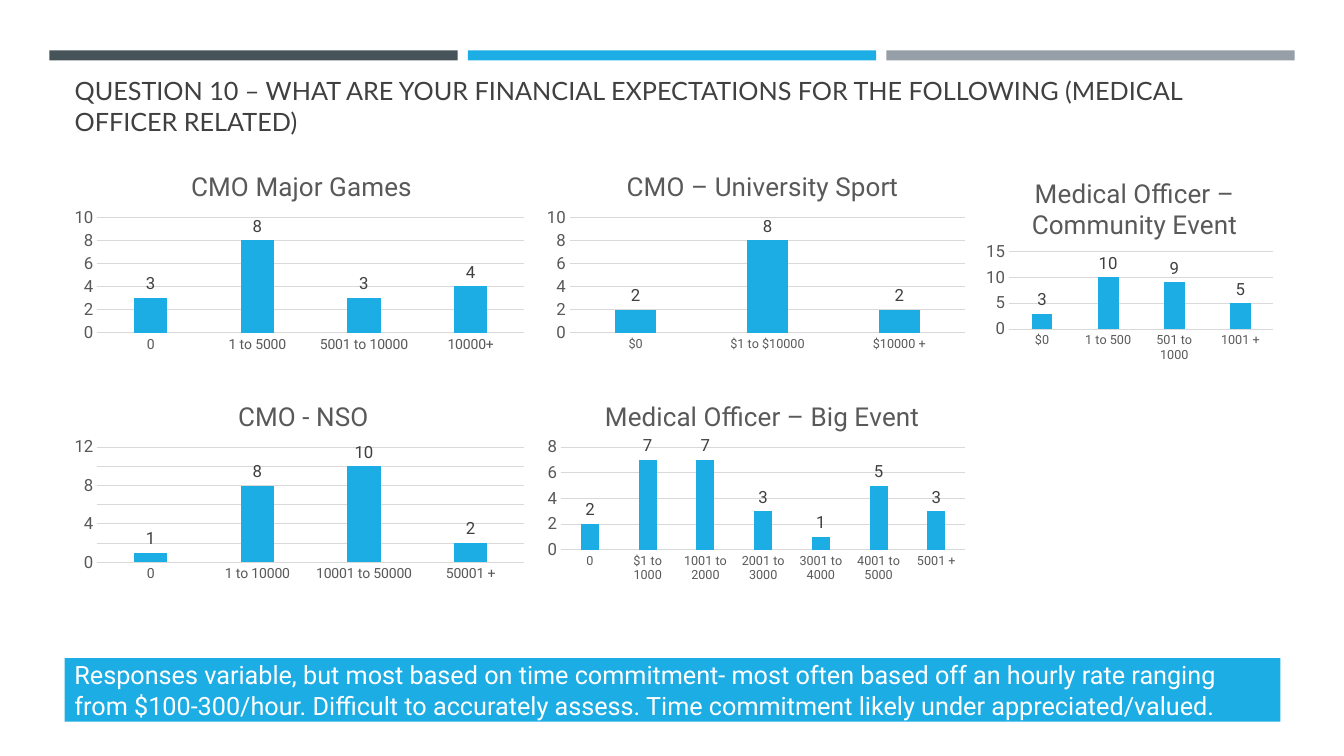
from dataclasses import dataclass

from lxml.etree import SubElement
from pptx import Presentation
from pptx.chart.data import CategoryChartData
from pptx.dml.color import RGBColor
from pptx.enum.chart import XL_CHART_TYPE, XL_LABEL_POSITION, XL_TICK_MARK
from pptx.enum.shapes import MSO_SHAPE
from pptx.enum.text import MSO_ANCHOR, MSO_AUTO_SIZE, PP_ALIGN
from pptx.oxml.ns import qn
from pptx.util import Inches, Pt

BLUE, DARK, GREY = "1CADE4", "465359", "969FA7"
TEXT, SOFT, GRID = "404040", "595959", "D9D9D9"
LEFT, WIDTH = 0.64, 12.06


@dataclass
class Panel:
    title: str
    box: tuple[float, float, float, float]
    votes: dict[str, int]
    top: int  # highest value on the axis
    step: int
    size: float  # category labels, in points
    head: tuple[float, float]  # title place, as shares of the chart
    plot: tuple[float, float, float, float]  # plot place, as shares


ROWS = (1.47, 3.75)
HIGH = 2.08
PANELS = [
    Panel("CMO Major Games", (LEFT, ROWS[0], 4.65, HIGH),
          {"0": 3, "1 to 5000": 8, "5001 to 10000": 3, "10000+": 4},
          10, 2, 10, (0.26, 0.08), (0.07, 0.33, 0.91, 0.55)),
    Panel("CMO - NSO", (LEFT, ROWS[1], 4.65, HIGH),
          {"0": 1, "1 to 10000": 8, "10001 to 50000": 10, "50001 +": 2},
          12, 2, 10, (0.36, 0.08), (0.07, 0.33, 0.91, 0.55)),
    Panel("CMO – University Sport", (5.35, ROWS[0], 4.31, HIGH),
          {"$0": 2, "$1 to $10000": 8, "$10000 +": 2},
          10, 2, 9, (0.19, 0.08), (0.07, 0.33, 0.91, 0.55)),
    Panel("Medical Officer – Big Event", (5.35, ROWS[1], 4.31, HIGH),
          {"0": 2, "$1 to 1000": 7, "1001 to 2000": 7, "2001 to 3000": 3,
           "3001 to 4000": 1, "4001 to 5000": 5, "5001 +": 3},
          8, 2, 9, (0.14, 0.08), (0.05, 0.33, 0.93, 0.49)),
    Panel("Medical Officer – Community Event", (9.71, 1.56, 2.98, HIGH),
          {"$0": 3, "1 to 500": 10, "501 to 1000": 9, "1001 +": 5},
          15, 5, 9, (0.16, 0.07), (0.1, 0.45, 0.88, 0.37)),
]


def color(code: str) -> RGBColor:
    return RGBColor.from_string(code)


def style(font, size: float, code: str, name: str = "Roboto") -> None:
    font.size, font.name, font.bold = Pt(size), name, False
    font.color.rgb = color(code)


def write(frame, text: str, name: str, code: str) -> None:
    frame.text = text
    frame.word_wrap = True
    frame.auto_size = MSO_AUTO_SIZE.NONE
    frame.paragraphs[0].alignment = PP_ALIGN.LEFT
    style(frame.paragraphs[0].runs[0].font, 18, code, name)


def block(slide, box: tuple, code: str):
    shape = slide.shapes.add_shape(MSO_SHAPE.RECTANGLE, *map(Inches, box))
    shape.shadow.inherit = False
    shape.fill.solid()
    shape.fill.fore_color.rgb = color(code)
    shape.line.fill.background()
    return shape


def place(node, index: int, shares: tuple, inner: bool = False) -> None:
    """Fix where a chart part sits, as shares of the chart's size."""
    for old in node.findall(qn("c:layout")):
        node.remove(old)
    layout = node.makeelement(qn("c:layout"))
    node.insert(index, layout)
    manual = SubElement(layout, qn("c:manualLayout"))
    pairs = [("layoutTarget", "inner")] if inner else []
    pairs += [("xMode", "edge"), ("yMode", "edge"), *zip("xywh", shares)]
    for tag, value in pairs:
        SubElement(manual, qn(f"c:{tag}")).set("val", str(value))


def rule(line) -> None:
    line.color.rgb = color(GRID)
    line.width = Pt(0.75)


def draw(slide, panel: Panel) -> None:
    data = CategoryChartData()
    data.categories = list(panel.votes)
    data.add_series("Series 1", list(panel.votes.values()))
    chart = slide.shapes.add_chart(
        XL_CHART_TYPE.COLUMN_CLUSTERED, *map(Inches, panel.box), data).chart
    chart.has_legend = False
    style(chart.font, 10, "000000")

    # Chart title
    chart.has_title = True
    title = chart.chart_title
    title.text_frame.text = panel.title
    style(title.text_frame.paragraphs[0].runs[0].font, 18.6, SOFT)
    title.include_in_layout = False
    place(title.element, 1, panel.head)
    place(chart.element.find(".//" + qn("c:plotArea")), 0, panel.plot, True)

    # Axes
    cats, vals = chart.category_axis, chart.value_axis
    for axis, size in ((cats, panel.size), (vals, 12)):
        axis.major_tick_mark = axis.minor_tick_mark = XL_TICK_MARK.NONE
        style(axis.tick_labels.font, size, SOFT)
    rule(cats.format.line)
    vals.format.line.fill.background()
    rule(vals.major_gridlines.format.line)
    vals.minimum_scale, vals.maximum_scale = 0, panel.top
    vals.major_unit = panel.step

    # Columns and their labels
    plot = chart.plots[0]
    plot.gap_width, plot.overlap, plot.vary_by_categories = 219, -27, False
    fill = plot.series[0].format.fill
    fill.solid()
    fill.fore_color.rgb = color(BLUE)
    labels = plot.series[0].data_labels
    labels.show_value = True
    labels.position = XL_LABEL_POSITION.OUTSIDE_END
    style(labels.font, 12, TEXT)


def main() -> None:
    deck = Presentation()
    deck.slide_width, deck.slide_height = Inches(13.33), Inches(7.5)
    slide = deck.slides.add_slide(deck.slide_layouts[5])

    # Top bars
    for i, code in enumerate((DARK, BLUE, GREY)):
        block(slide, (0.49 + 4.15 * i, 0.5, 4.05, 0.1), code)

    # Title
    title = slide.shapes.title
    title.left, title.top = Inches(LEFT), Inches(0.77)
    title.width, title.height = Inches(WIDTH), Inches(0.63)
    write(title.text_frame, "QUESTION 10 – WHAT ARE YOUR FINANCIAL EXPECTATIONS "
          "FOR THE FOLLOWING (MEDICAL OFFICER RELATED)", "Lato", TEXT)
    title.text_frame.vertical_anchor = MSO_ANCHOR.BOTTOM

    # Summary band
    band = block(slide, (LEFT, 6.53, WIDTH, 0.63), BLUE)
    write(band.text_frame, "Responses variable, but most based on time commitment- "
          "most often based off an hourly rate ranging from $100-300/hour. "
          "Difficult to accurately assess. Time commitment likely under "
          "appreciated/valued.", "Roboto", "FFFFFF")
    band.text_frame.vertical_anchor = MSO_ANCHOR.MIDDLE

    # Charts
    for panel in PANELS:
        draw(slide, panel)
    deck.save("out.pptx")


if __name__ == "__main__":
    main()
